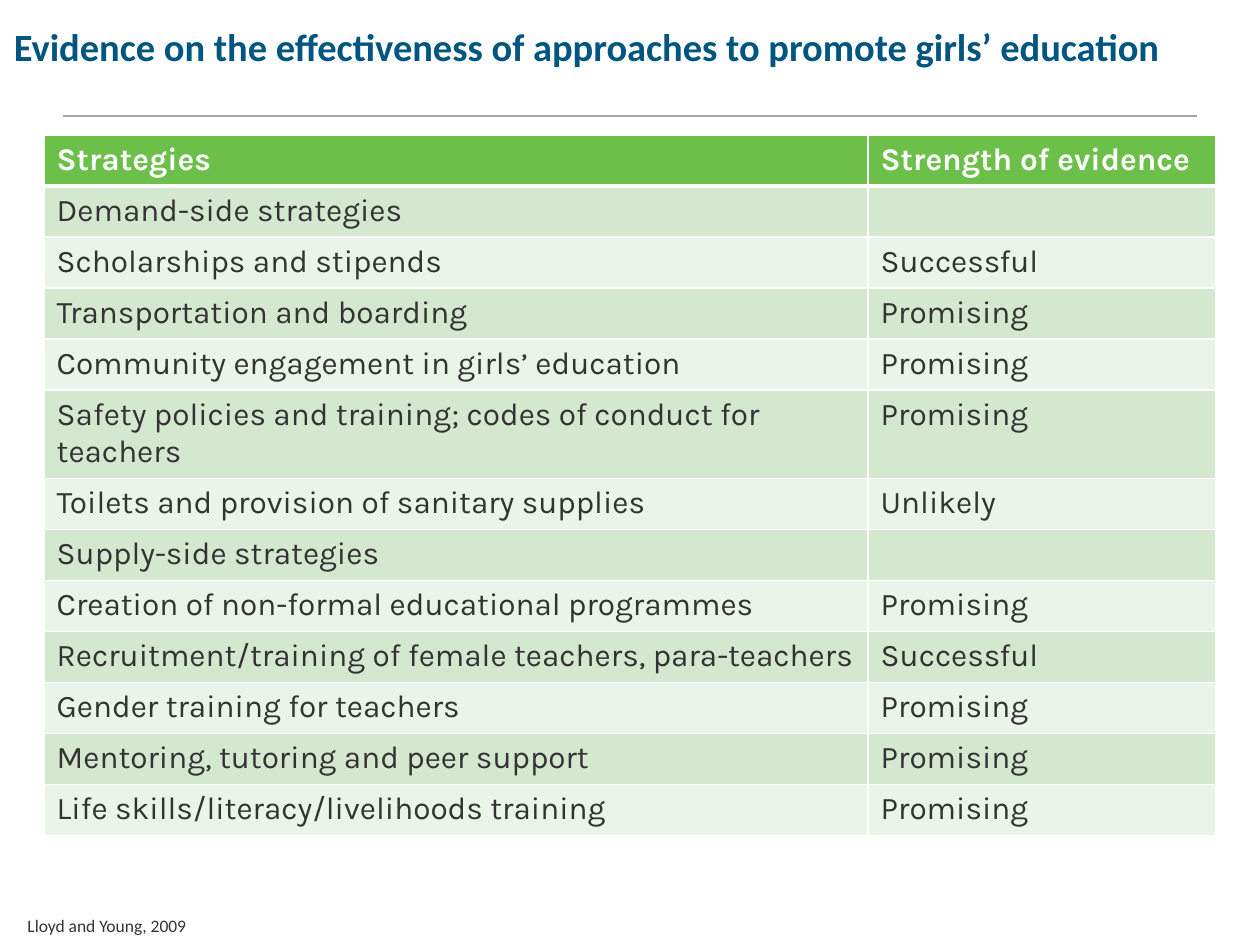
from lxml.etree import SubElement
from pptx import Presentation
from pptx.dml.color import RGBColor
from pptx.enum.shapes import MSO_CONNECTOR
from pptx.enum.text import MSO_ANCHOR, MSO_AUTO_SIZE, PP_ALIGN
from pptx.oxml.ns import qn
from pptx.util import Inches, Pt

COLORS = {
    "title": "005581",
    "text": "333333",
    "white": "FFFFFF",
    "rule": "A6A6A6",
    "header": "6CC04A",
    "band_dark": "D4E8D0",
    "band_light": "EBF4E9",
}

STRATEGIES = [
    ("Strategies", "Strength of evidence"),
    ("Demand-side strategies", ""),
    ("Scholarships and stipends", "Successful"),
    ("Transportation and boarding", "Promising"),
    ("Community engagement in girls’ education", "Promising"),
    ("Safety policies and training; codes of conduct for teachers", "Promising"),
    ("Toilets and provision of sanitary supplies", "Unlikely"),
    ("Supply-side strategies", ""),
    ("Creation of non-formal educational programmes", "Promising"),
    ("Recruitment/training of female teachers, para-teachers", "Successful"),
    ("Gender training for teachers", "Promising"),
    ("Mentoring, tutoring and peer support", "Promising"),
    ("Life skills/literacy/livelihoods training", "Promising"),
]


def rgb(name):
    return RGBColor.from_string(COLORS[name])


def add_run(paragraph, text, font, size, color, bold=False):
    run = paragraph.add_run()
    run.text = text
    run.font.name = font
    run.font.size = Pt(size)
    run.font.bold = bold
    run.font.color.rgb = rgb(color)


def place(shape, left, top, width, height):
    shape.left, shape.top = Inches(left), Inches(top)
    shape.width, shape.height = Inches(width), Inches(height)


def set_borders(cell, bottom_width):
    properties = cell._tc.get_or_add_tcPr()
    widths = {"a:lnL": 1, "a:lnR": 1, "a:lnT": 1, "a:lnB": bottom_width}
    for side, width in widths.items():
        line = SubElement(properties, qn(side), w=str(Pt(width)))
        fill = SubElement(line, qn("a:solidFill"))
        SubElement(fill, qn("a:srgbClr"), val=COLORS["white"])


def add_heading(slide, left, top, width, height):
    title = slide.shapes.title
    place(title, left, top, width, height)
    frame = title.text_frame
    frame.word_wrap = True
    frame.auto_size = MSO_AUTO_SIZE.SHAPE_TO_FIT_TEXT
    frame.vertical_anchor = MSO_ANCHOR.TOP
    heading = frame.paragraphs[0]
    heading.alignment = PP_ALIGN.LEFT
    add_run(heading, "Evidence on the effectiveness of approaches to promote girls’ education",
            "Calibri", 22, "title", True)


def add_rule(slide, left, top, width):
    rule = slide.shapes.add_connector(
        MSO_CONNECTOR.STRAIGHT, Inches(left), Inches(top), Inches(left + width), Inches(top))
    rule.line.color.rgb = rgb("rule")
    rule.line.width = Pt(1)
    SubElement(rule._element.spPr, qn("a:effectLst"))


def add_evidence_table(slide, left, top, width, height, strategy_width):
    table = slide.shapes.add_table(
        len(STRATEGIES), 2, Inches(left), Inches(top), Inches(width), Inches(height)).table
    table.columns[0].width = Inches(strategy_width)
    table.columns[1].width = Inches(width - strategy_width)
    for row, entry in enumerate(STRATEGIES):
        is_header = row == 0
        band = "header" if is_header else "band_dark" if row % 2 else "band_light"
        for column, text in enumerate(entry):
            cell = table.cell(row, column)
            next_to_header = row == 1
            set_borders(cell, 3 if is_header else 1)
            if next_to_header:
                cell._tc.tcPr.find(qn("a:lnT")).set("w", str(Pt(3)))
            cell.fill.solid()
            cell.fill.fore_color.rgb = rgb(band)
            if text:
                add_run(cell.text_frame.paragraphs[0], text, "Karla", 18,
                        "white" if is_header else "text", is_header)


def add_citation(slide, left, top, width, height):
    citation = slide.shapes.add_textbox(
        Inches(left), Inches(top), Inches(width), Inches(height))
    frame = citation.text_frame
    frame.word_wrap = True
    frame.auto_size = MSO_AUTO_SIZE.SHAPE_TO_FIT_TEXT
    add_run(frame.paragraphs[0], "Lloyd and Young, 2009", "Calibri", 10, "text")


def main():
    deck = Presentation()
    deck.slide_width, deck.slide_height = Inches(10), Inches(7.5)
    slide = deck.slides.add_slide(deck.slide_layouts[5])
    add_rule(slide, 0.5, 0.92, 9)
    add_heading(slide, 0.01, 0.13, 10.03, 0.47)
    add_citation(slide, 0.12, 7.21, 4.8, 0.27)
    add_evidence_table(slide, 0.35, 1.07, 9.3, 5.27, 6.54)
    deck.save("out.pptx")


if __name__ == "__main__":
    main()
